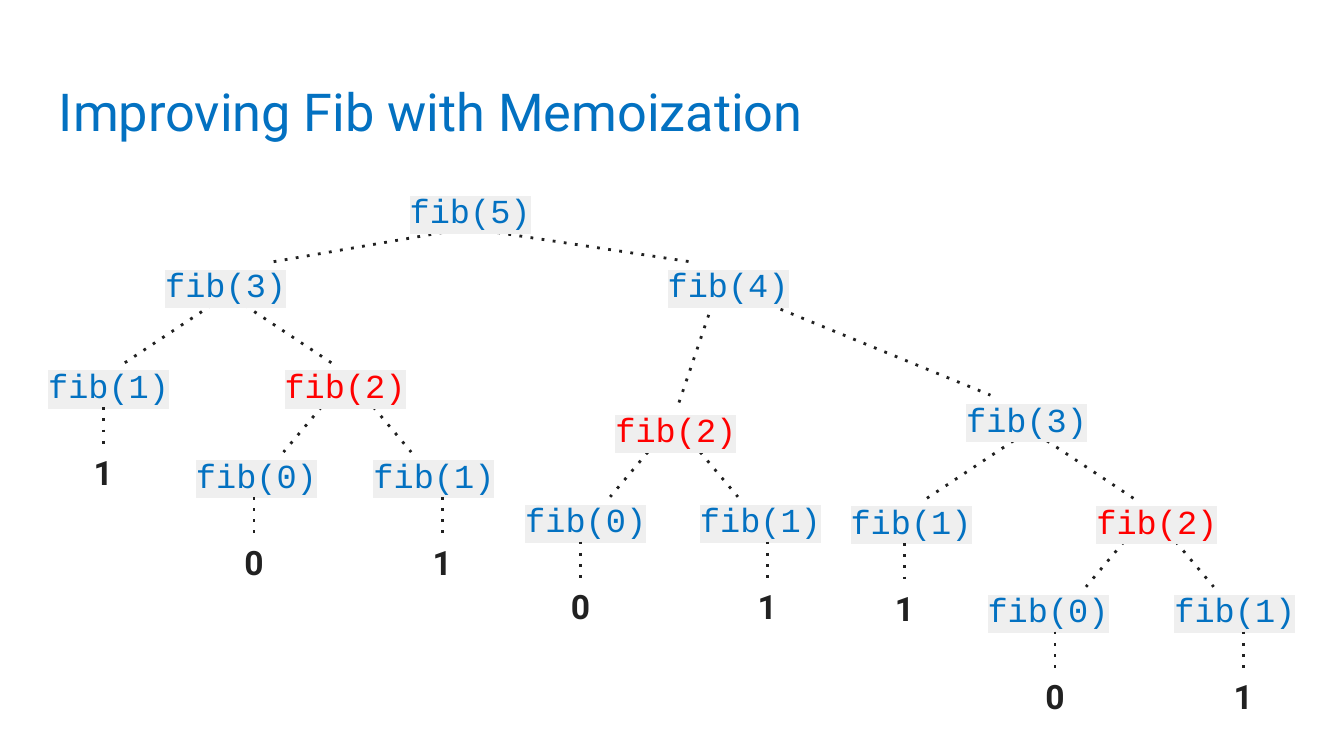
import pptx
import pptx.util
import pptx.dml.color
import pptx.enum.shapes
import pptx.enum.text
import pptx.oxml.ns
import lxml.etree
from dataclasses import dataclass

Pt = pptx.util.Pt
ALIGN = pptx.enum.text.PP_ALIGN
ANCHOR = pptx.enum.text.MSO_ANCHOR


@dataclass(frozen=True)
class Theme:
    blue: str = "0371C1"
    red: str = "FF0000"
    ink: str = "212121"
    gray: str = "EFEFEF"
    sans: str = "Roboto"
    mono: str = "Courier New"
    head: float = 28
    body: float = 18
    line: float = 1.5


WIDE, HIGH = 80, 23.8    # size of a call
STEM, DROP = 21, 22.8    # stem length, and from stem top to value

# argument, left, top, centre of the returned value (None if it recurses)
CALLS = [
    (5, 212.4, 100.8, None),
    (3, 81.4, 140.4, None), (4, 350.6, 140.4, None),
    (1, 18.7, 194.4, 55.4), (2, 145.4, 194.4, None),
    (0, 97.9, 242.4, 136.1), (1, 193, 242.4, 236.9),
    (2, 322.6, 218.2, None),
    (0, 274.3, 266.4, 311), (1, 367.9, 266.4, 411.1),
    (3, 510.5, 212.4, None),
    (1, 448.6, 267.1, 484.6), (2, 580.3, 267.1, None),
    (0, 522, 314.6, 565.2), (1, 622.1, 314.6, 666),
]

# Even forks: centre, top, height, half width at top, half width at bottom
FORKS = [
    (122.2, 163.6, 30.8, 9, 55.4), (551.9, 236.2, 30.8, 9, 55.4),
    (186.1, 218.2, 24, 14, 34.2), (361.1, 242.2, 24, 14, 34.2),
    (616, 290.4, 24, 14, 34.2),
]

# Uneven branches: start x, start y, end x, end y
ARMS = [
    (236.9, 124.6, 145.4, 140.4), (266.4, 124.6, 370.8, 140.4),
    (381.6, 163, 362.9, 218.2), (412.6, 163.4, 530.6, 211.7),
]


class Deck:
    def __init__(self, theme):
        self.theme = theme
        self.file = pptx.Presentation()
        self.file.slide_width, self.file.slide_height = Pt(720), Pt(405)
        self.slide = self.file.slides.add_slide(self.file.slide_layouts[6])

    def text(self, words, box, face, size, color, anchor=ANCHOR.MIDDLE):
        """Add a text box and return its paragraph."""
        shape = self.slide.shapes.add_textbox(*map(Pt, box))
        frame = shape.text_frame
        frame.word_wrap = True
        frame.vertical_anchor = anchor
        frame.margin_left = frame.margin_right = Pt(7.2)
        frame.margin_top = frame.margin_bottom = Pt(7.2)
        frame.text = words
        para = frame.paragraphs[0]
        font = para.runs[0].font
        font.size = Pt(size)
        font.color.rgb = pptx.dml.color.RGBColor.from_string(color)
        font.name = face
        return para

    def title(self, words):
        t = self.theme
        self.text(words, (24.5, 35.3, 671, 45.4), t.sans, t.head, t.blue,
                  ANCHOR.TOP)

    def call(self, n, left, top):
        t = self.theme
        color = t.red if n == 2 else t.blue
        para = self.text(f"fib({n})", (left, top, WIDE, HIGH),
                         t.mono, t.body, color)
        self.mark(para.runs[0])

    def mark(self, run):
        """Highlight a run; the element must follow its fill."""
        qn = pptx.oxml.ns.qn
        fill = run.font._element.find(qn("a:solidFill"))
        light = lxml.etree.Element(qn("a:highlight"))
        lxml.etree.SubElement(light, qn("a:srgbClr"), val=self.theme.gray)
        fill.addnext(light)

    def value(self, n, mid, top):
        """Add a dotted stem with the returned number below it."""
        t = self.theme
        self.line(mid, top, mid, top + STEM)
        para = self.text(str(n), (mid - 36, top + DROP, 72, HIGH),
                         t.sans, t.body, t.ink)
        para.alignment = ALIGN.CENTER
        para.runs[0].font.bold = True

    def line(self, *ends):
        qn = pptx.oxml.ns.qn
        kind = pptx.enum.shapes.MSO_CONNECTOR.STRAIGHT
        link = self.slide.shapes.add_connector(kind, *map(Pt, ends))
        link.line.width = Pt(self.theme.line)
        link.line.color.rgb = pptx.dml.color.RGBColor.from_string(
            self.theme.ink)
        props = link._element.spPr
        lxml.etree.SubElement(props.find(qn("a:ln")), qn("a:prstDash"),
                              val="dot")
        lxml.etree.SubElement(props, qn("a:effectLst"))

    def fork(self, mid, top, high, near, far):
        for side in (-1, 1):
            self.line(mid + side * near, top, mid + side * far, top + high)


def main():
    deck = Deck(Theme())
    deck.title("Improving Fib with Memoization")
    for arm in ARMS:
        deck.line(*arm)
    for fork in FORKS:
        deck.fork(*fork)
    for n, left, top, mid in CALLS:
        deck.call(n, left, top)
        if mid is not None:
            deck.value(n, mid, top + HIGH)
    deck.file.save("out.pptx")


if __name__ == "__main__":
    main()
